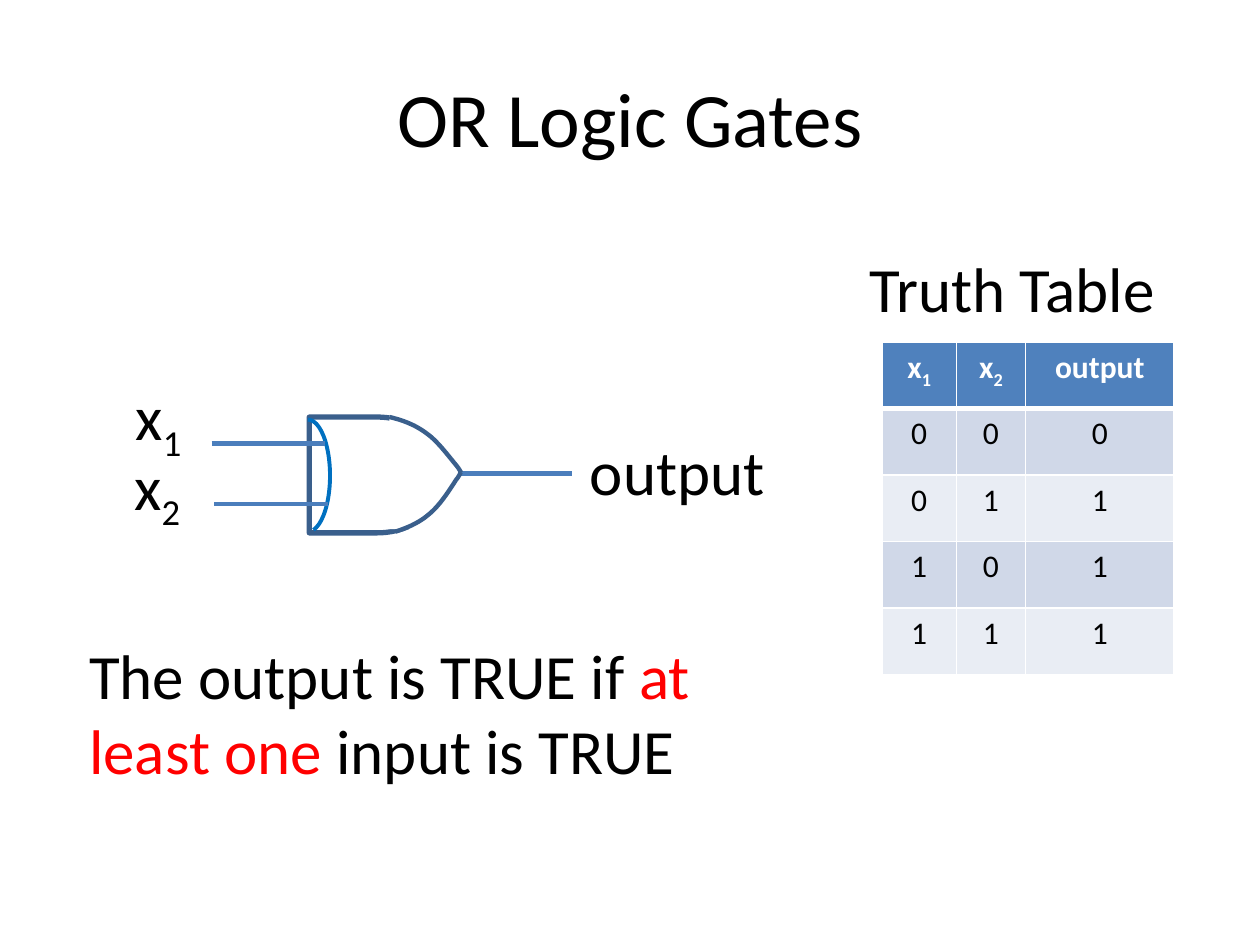
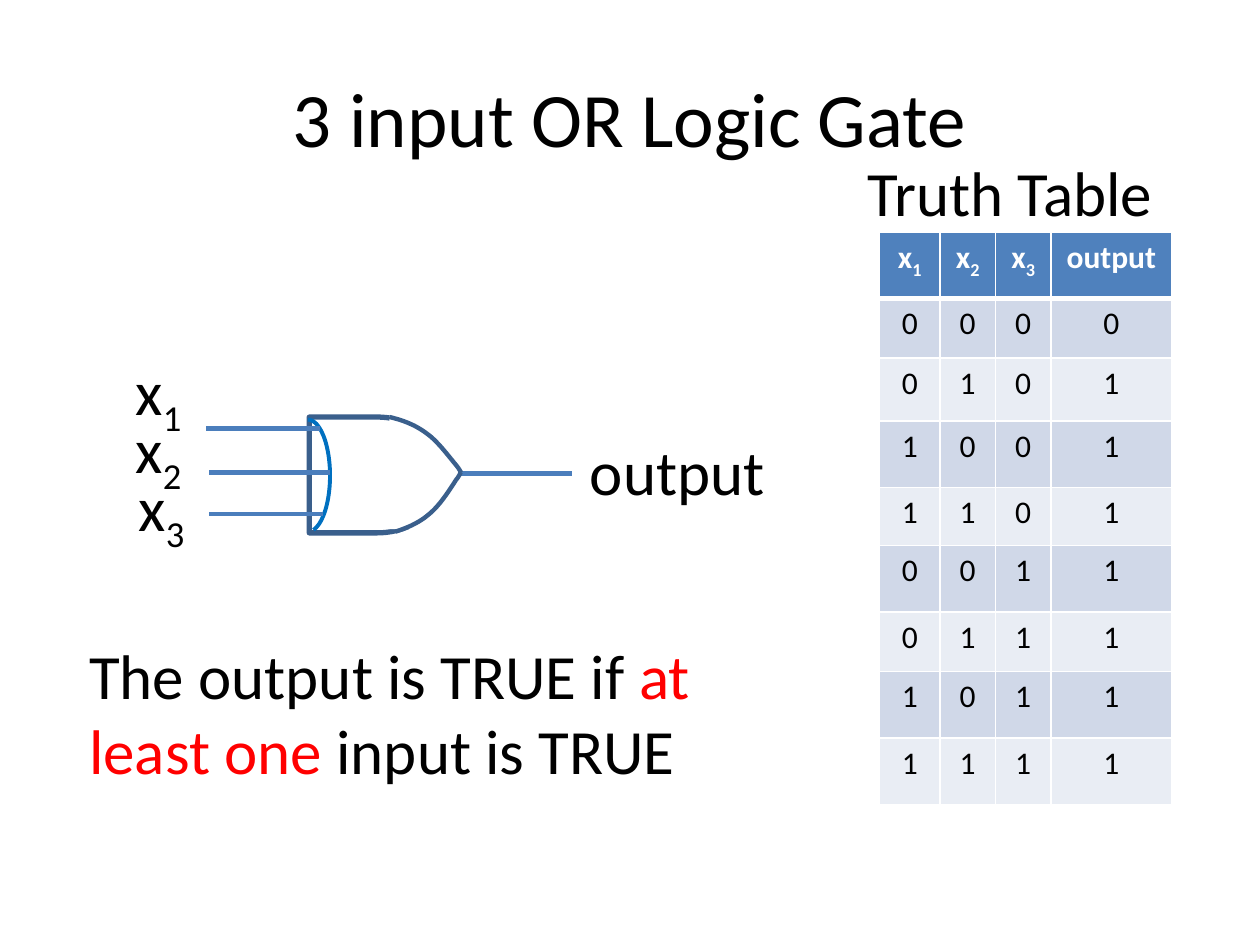
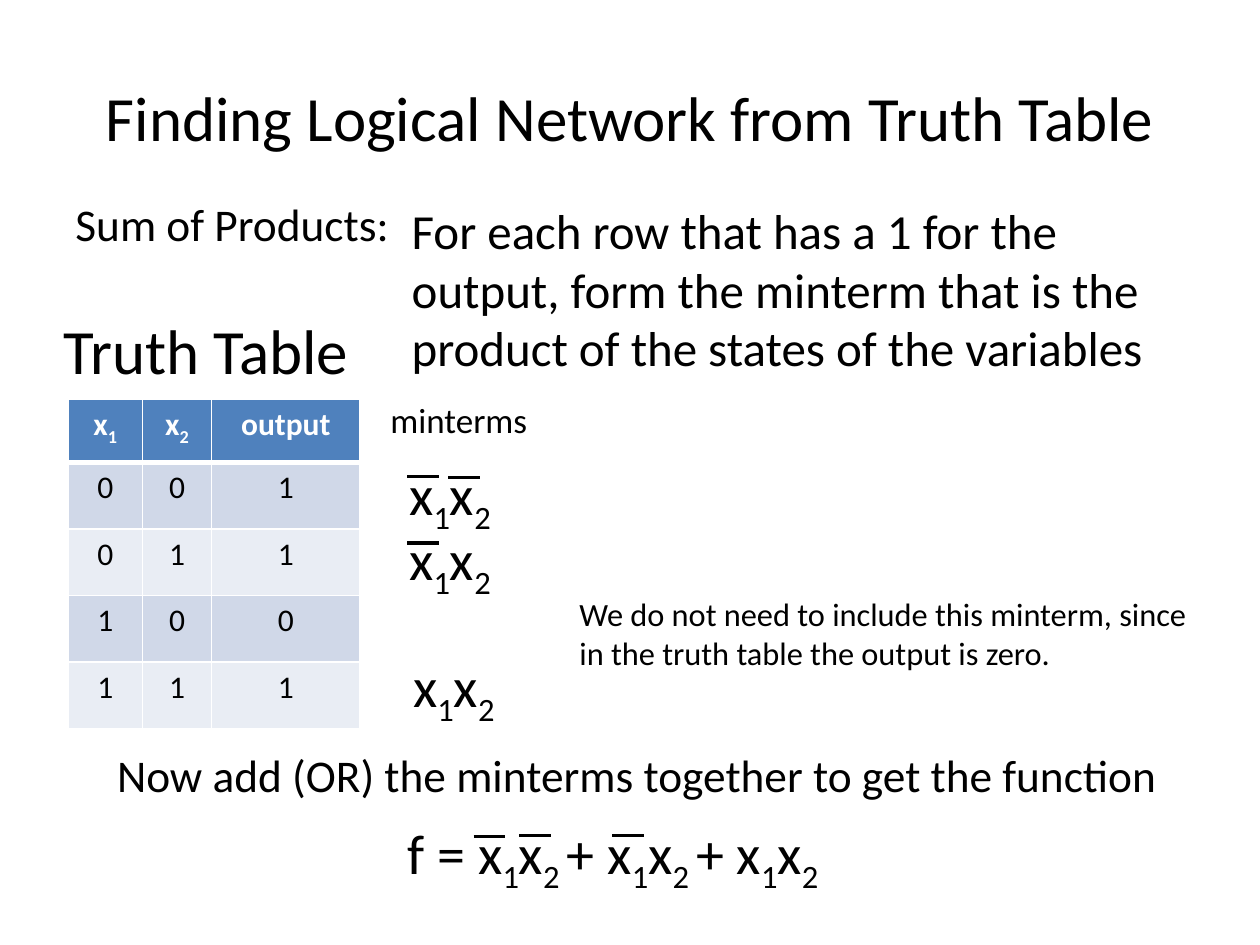
from dataclasses import dataclass

from lxml import etree
from pptx import Presentation
from pptx import util as u
from pptx.dml.color import RGBColor
from pptx.enum import shapes, text
from pptx.oxml import ns


@dataclass(frozen=True)
class Theme:
    font: str = "Calibri"
    ink: str = "000000"
    paper: str = "FFFFFF"
    alert: str = "FF0000"
    wire: str = "4B7EBC"
    gate: str = "3A5F8C"
    arc: str = "0070C0"
    header: str = "4F81BD"
    bands: tuple = ("D0D8E8", "E9EDF4")
    title: float = 44
    large: float = 36
    formula: float = 32
    body: float = 28
    lead: float = 25.9
    small: float = 20
    note: float = 18.5
    cell: float = 18


theme = Theme()


def write(paragraph, marked, size, color=theme.ink, accent=None, bold=False):
    for index, part in enumerate(marked.split("|")):
        if not part:
            continue
        run = paragraph.add_run()
        run.text = part
        run.font.name = theme.font
        run.font.size = u.Pt(size)
        run.font.bold = bold
        marked_part = index % 2 == 1
        run.font.color.rgb = RGBColor.from_string(accent if marked_part and accent else color)
        if marked_part and not accent:
            run._r.get_or_add_rPr().set("baseline", "-25000")


def draw_line(slide, x1, x2, y, color, width):
    line = slide.shapes.add_connector(
        shapes.MSO_CONNECTOR.STRAIGHT, u.Pt(x1), u.Pt(y), u.Pt(x2), u.Pt(y))
    line.line.color.rgb = RGBColor.from_string(color)
    line.line.width = u.Pt(width)
    etree.SubElement(line._element.spPr, ns.qn("a:effectLst"))


deck = Presentation()
deck.slide_width, deck.slide_height = u.Pt(720), u.Pt(540)

headings = [
    ("OR Logic Gates", theme.title),
    ("3 input OR Logic Gate", theme.title),
    ("Finding Logical Network from Truth Table", theme.large),
]
for heading, size in headings:
    slide = deck.slides.add_slide(deck.slide_layouts[5])
    title = slide.shapes.title
    title.left, title.top, title.width, title.height = u.Pt(36), u.Pt(21.6), u.Pt(648), u.Pt(90)
    title.text_frame.vertical_anchor = text.MSO_ANCHOR.MIDDLE
    title.text_frame.paragraphs[0].alignment = text.PP_ALIGN.CENTER
    write(title.text_frame.paragraphs[0], heading, size)
two_inputs, three_inputs, network = deck.slides

gate_inputs = [
    (two_inputs, [(121, 253.4), (122.4, 288)]),
    (three_inputs, [(118, 244.8), (119.5, 270), (119.5, 293.8)]),
]
gate_curves = [
    [(222.5, 238.3), (231.8, 240.5), (238.3, 243.4), (244.8, 248.4), (250.6, 252.7),
     (257.4, 262), (260.6, 265.7), (263.5, 269.3), (263.2, 270), (263.5, 270)],
    [(226.1, 303.8), (234.7, 301), (240.5, 298.1), (246.2, 293), (252, 288),
     (257.8, 278.6), (260.6, 274.3), (263.5, 270.7), (263.2, 269.3), (263.5, 270)],
]
steps = 10
for slide, inputs in gate_inputs:
    draw_line(slide, 262, 327, 270.5, theme.wire, 2.5)
    for preset, box, color, width in [
        (shapes.MSO_SHAPE.FLOWCHART_DELAY, (176.7, 238.3, 77.8, 66.2), theme.gate, 3),
        (shapes.MSO_SHAPE.ARC, (163.4, 239.8, 25.2, 64), theme.arc, 2.25),
    ]:
        outline = slide.shapes.add_shape(preset, *map(u.Pt, box))
        outline.shadow.inherit = False
        outline.fill.background()
        outline.line.color.rgb = RGBColor.from_string(color)
        outline.line.width = u.Pt(width)
        if preset == shapes.MSO_SHAPE.ARC:
            outline.adjustments[1] = 50.537
    for x, y in inputs:
        draw_line(slide, x, 188.6 if y == 270 else x + 65, y, theme.wire, 2.5)
    mask = slide.shapes.add_shape(
        shapes.MSO_SHAPE.RECTANGLE, u.Pt(222.5), u.Pt(237.6), u.Pt(36), u.Pt(64.8))
    mask.shadow.inherit = False
    mask.fill.solid()
    mask.fill.fore_color.rgb = RGBColor.from_string(theme.paper)
    mask.line.fill.background()
    for controls in gate_curves:
        points = []
        for start in range(0, len(controls) - 1, 3):
            bezier = controls[start:start + 4]
            for step in range(1, steps + 1):
                t = step / steps
                weights = ((1 - t) ** 3, 3 * t * (1 - t) ** 2, 3 * t * t * (1 - t), t ** 3)
                points.append(tuple(
                    u.Pt(sum(w * point[axis] for w, point in zip(weights, bezier)))
                    for axis in (0, 1)))
        builder = slide.shapes.build_freeform(*map(u.Pt, controls[0]), scale=1.0)
        builder.add_line_segments(points, close=False)
        curve = builder.convert_to_shape()
        curve.shadow.inherit = False
        curve.fill.background()
        curve.line.color.rgb = RGBColor.from_string(theme.gate)
        curve.line.width = u.Pt(2.5)

edge = 7.2
space = 8.15
wording = [
    (two_inputs, (54, 212.4, 72, 51), "x|1|", theme.large, 2 * space),
    (two_inputs, (53.3, 252, 72, 51), "x|2|", theme.large, 2 * space),
    (three_inputs, (54, 198, 72, 51), "x|1|", theme.large, 2 * space),
    (three_inputs, (54, 231.1, 72, 51), "x|2|", theme.large, 2 * space),
    (three_inputs, (55.7, 264.4, 72, 51), "x|3|", theme.large, 2 * space),
    (two_inputs, (481.7, 139, 189.4, 80), "Truth Table", theme.large, space),
    (three_inputs, (480.3, 84.2, 189.4, 80), "Truth Table", theme.large, space),
    (network, (20.9, 174.2, 189.4, 51), "Truth Table", theme.large, space),
    (network, (228.2, 110.9, 462.2, 105),
     "For each row that has a 1 for the output, form the minterm that is the "
     "product of the states of the variables", theme.body, 0),
    (network, (226.8, 259.2, 66.2, 47.5), "x|1|x|2|", theme.formula, 0),
    (network, (226.8, 296, 66.2, 47.5), "x|1|x|2|", theme.formula, 0),
    (network, (229, 368.6, 66.2, 47.5), "x|1|x|2|", theme.formula, 0),
    (network, (216, 224, 108, 32.4), "minterms", theme.small, 0),
    (network, (324, 336.2, 366.5, 47.5),
     "We do not need to include this minterm, since in the truth table the output is zero.",
     theme.note, 0),
    (network, (226, 464.4, 440.6, 64),
     "f = x|1|x|2 |+ x|1|x|2 |+ x|1|x|2|", theme.formula, 0),
    (network, (59.8, 423.4, 624.2, 47.5),
     "Now add (OR) the minterms together to get the function", theme.lead, 0),
    (network, (36, 108.7, 202.3, 42.5), "Sum of Products:", theme.lead, 0),
]
for slide in (two_inputs, three_inputs):
    wording += [
        (slide, (321.8, 243.4, 148.3, 51), "output", theme.large, space),
        (slide, (43.9, 360, 426.2, 94.3),
         "The output is TRUE if |at least one| input is TRUE", theme.large, 0),
    ]
for slide, box, marked, size, indent in wording:
    frame = slide.shapes.add_textbox(*map(u.Pt, box)).text_frame
    frame.word_wrap = True
    frame.margin_left = u.Pt(edge + indent)
    accent = theme.alert if "at least" in marked else None
    write(frame.paragraphs[0], marked, size, accent=accent)

negations = [(232.6, 272.2), (256.3, 272.9), (232.6, 310.3),
             (270.7, 478), (296.6, 477.4), (349.9, 477.4)]
for x, y in negations:
    draw_line(network, x, x + 18, y, theme.ink, 2)

truth_tables = [
    (two_inputs, (504, 195.5), (42.5, 39.5, 85), (38,) * 5, "000 011 101 111"),
    (three_inputs, (502.6, 132.7), (34.5, 31.7, 31.7, 69.1),
     (38, 34, 36, 38, 33, 38, 34, 38, 38), "0000 0101 1001 1101 0011 0111 1011 1111"),
    (network, (38.9, 228.4), (42.5, 39.5, 85), (36,) + (38,) * 4, "001 011 100 111"),
]
for slide, (left, top), widths, heights, states in truth_tables:
    header = [f"x|{n}|" for n in range(1, len(widths))] + ["output"]
    rows = [header] + [list(state) for state in states.split()]
    table = slide.shapes.add_table(
        len(rows), len(widths), u.Pt(left), u.Pt(top),
        u.Pt(sum(widths)), u.Pt(sum(heights))).table
    for column, width in zip(table.columns, widths):
        column.width = u.Pt(width)
    for r, (row, height) in enumerate(zip(rows, heights)):
        table.rows[r].height = u.Pt(height)
        for c, value in enumerate(row):
            cell = table.cell(r, c)
            properties = cell._tc.get_or_add_tcPr()
            for side in "LRTB":
                heavy = (r, side) in ((0, "B"), (1, "T"))
                border = etree.SubElement(
                    properties, ns.qn(f"a:ln{side}"), w=str(u.Pt(3 if heavy else 1)))
                ink = etree.SubElement(border, ns.qn("a:solidFill"))
                etree.SubElement(ink, ns.qn("a:srgbClr"), val=theme.paper)
            cell.fill.solid()
            fill = theme.bands[(r - 1) % 2] if r else theme.header
            cell.fill.fore_color.rgb = RGBColor.from_string(fill)
            paragraph = cell.text_frame.paragraphs[0]
            paragraph.alignment = text.PP_ALIGN.CENTER
            write(paragraph, value, theme.cell, theme.ink if r else theme.paper, bold=r == 0)

deck.save("out.pptx")
